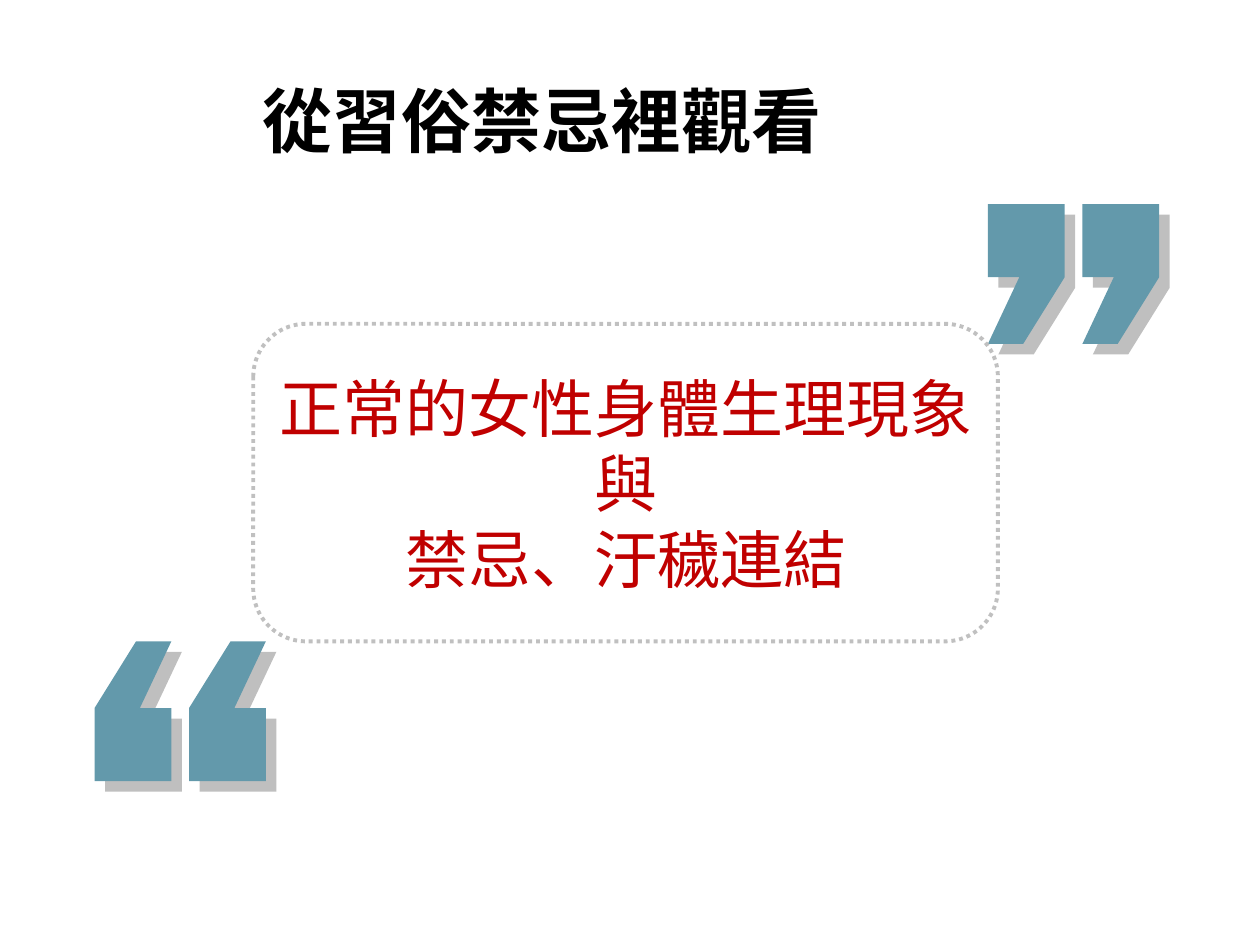
from lxml.etree import SubElement
from pptx import Presentation
from pptx.dml.color import RGBColor
from pptx.enum.dml import MSO_LINE
from pptx.enum.shapes import MSO_SHAPE
from pptx.enum.text import MSO_ANCHOR, PP_ALIGN
from pptx.oxml.ns import qn
from pptx.util import Inches, Pt

TITLE = "從習俗禁忌裡觀看"
STATEMENT = ["正常的女性身體生理現象", "與", "禁忌、汙穢連結"]

MARK_OUTLINE = [(0, 0), (0.61, 0), (0.61, 0.58), (0.28, 1.11), (0, 1.11), (0.25, 0.58), (0, 0.58)]
MARK_WIDTH, MARK_HEIGHT = 0.61, 1.11
MARK_STEP = 0.75
QUOTES = [
    {"left": 7.84, "top": 1.62, "opening": False},
    {"left": 0.75, "top": 5.09, "opening": True},
]


def color(hex_value):
    return RGBColor.from_string(hex_value)


def write_lines(frame, lines, font_name, size, hex_value, bold=False):
    frame.vertical_anchor = MSO_ANCHOR.MIDDLE
    for index, line in enumerate(lines):
        paragraph = frame.paragraphs[0] if index == 0 else frame.add_paragraph()
        paragraph.alignment = PP_ALIGN.CENTER
        run = paragraph.add_run()
        run.text = line
        run.font.name = font_name
        run.font.size = Pt(size)
        run.font.bold = bold
        run.font.color.rgb = color(hex_value)


def add_shadow(mark):
    mark.shadow.inherit = False
    effects = mark._element.spPr.find(qn("a:effectLst"))
    shadow = SubElement(effects, qn("a:outerShdw"), blurRad="0", dist=str(Pt(8.5)),
                        dir="2700000", algn="ctr", rotWithShape="0")
    tint = SubElement(shadow, qn("a:srgbClr"), val="808080")
    SubElement(tint, qn("a:alpha"), val="50000")


def add_mark(group, left, top, opening):
    outline = MARK_OUTLINE
    if opening:
        outline = [(MARK_WIDTH - x, MARK_HEIGHT - y) for x, y in outline]
    points = [(Inches(left + x), Inches(top + y)) for x, y in outline]
    builder = group.shapes.build_freeform(*points[0])
    builder.add_line_segments(points[1:], close=True)
    mark = builder.convert_to_shape()
    mark.fill.solid()
    mark.fill.fore_color.rgb = color("6399AB")
    mark.line.fill.background()
    add_shadow(mark)


def main():
    presentation = Presentation()
    presentation.slide_width, presentation.slide_height = Inches(10), Inches(7.5)
    slide = presentation.slides.add_slide(presentation.slide_layouts[5])

    title = slide.shapes.title
    title.left, title.top = Inches(0.5), Inches(0.28)
    title.width, title.height = Inches(7.6), Inches(1.34)
    write_lines(title.text_frame, [TITLE], "Arial", 40, "000000", bold=True)

    for quote in QUOTES:
        group = slide.shapes.add_group_shape()
        for position in range(2):
            add_mark(group, quote["left"] + position * MARK_STEP, quote["top"], quote["opening"])

    statement = slide.shapes.add_shape(
        MSO_SHAPE.ROUNDED_RECTANGLE, Inches(2.01), Inches(2.57), Inches(5.91), Inches(2.52))
    statement.shadow.inherit = False
    statement.fill.background()
    statement.line.color.rgb = color("C0C0C0")
    statement.line.width = Pt(2.25)
    statement.line.dash_style = MSO_LINE.ROUND_DOT
    statement.text_frame.word_wrap = False
    write_lines(statement.text_frame, STATEMENT, "Noto Sans Mono", 36, "C00000")

    presentation.save("out.pptx")


if __name__ == "__main__":
    main()
